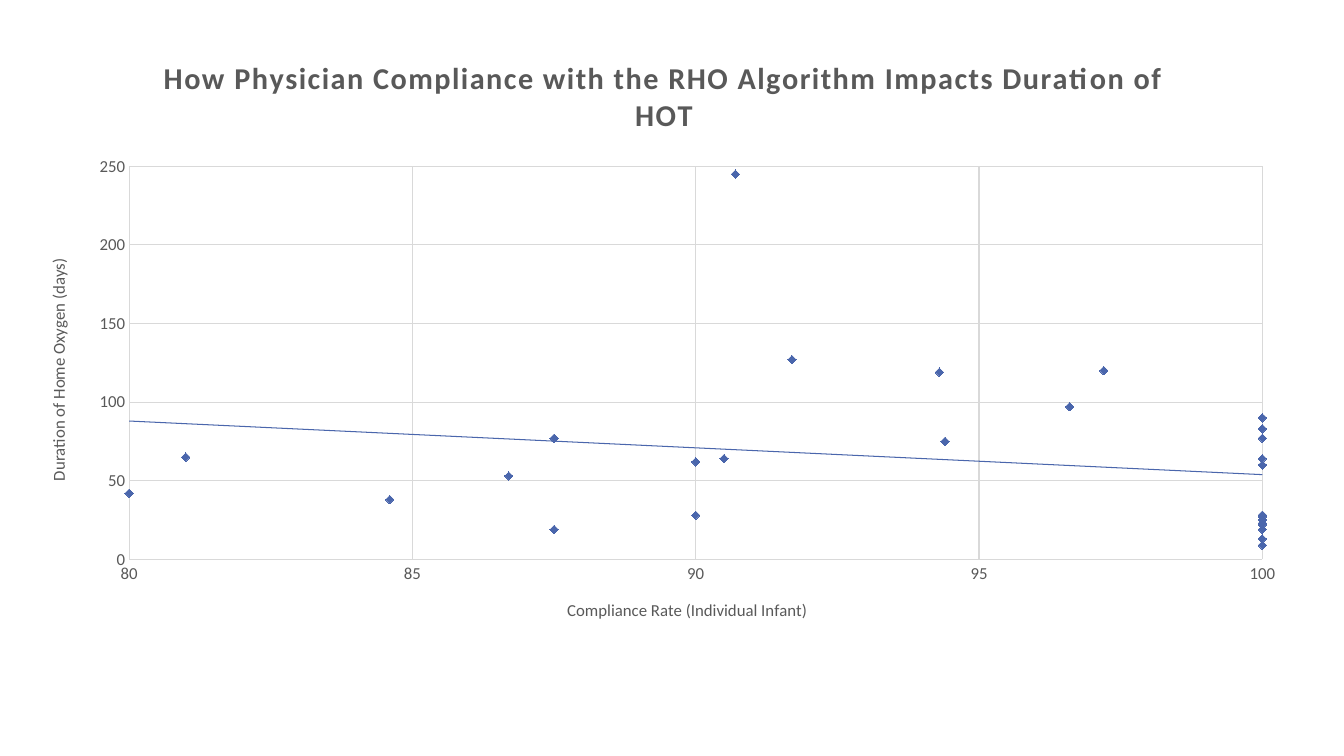
from lxml import etree
from pptx import Presentation
from pptx.chart.data import XyChartData
from pptx.dml.color import RGBColor
from pptx.enum.chart import XL_CHART_TYPE as ChartType
from pptx.enum.chart import XL_MARKER_STYLE as MarkerStyle
from pptx.enum.chart import XL_TICK_MARK as TickMark
from pptx.oxml import parse_xml
from pptx.oxml.ns import nsdecls, qn
from pptx.util import Inches, Pt

COLORS = {"text": "595959", "grid": "D9D9D9", "series": "4A66AC"}
FONT = "Calibri"
POINTS = [
    (90, 62), (86.7, 53), (84.6, 38), (100, 27), (100, 90), (91.7, 127),
    (100, 28), (97.2, 120), (100, 25), (100, 83), (90.7, 245), (90, 28),
    (100, 60), (78, 79), (96.6, 97), (87.5, 19), (87.5, 77), (100, 22),
    (100, 77), (100, 28), (100, 23), (74, 119), (79, 112), (100, 64),
    (94.4, 75), (100, 13), (100, 9), (94.3, 119), (81, 65), (80, 42),
    (90.5, 64), (100, 19),
]
PLOT_LAYOUT = {"x": 0.08, "y": 0.22, "w": 0.89, "h": 0.65}


def color(name):
    """Return the named colour."""
    return RGBColor.from_string(COLORS[name])


def format_font(font, size, bold=False):
    """Apply the chart's typeface and text colour."""
    font.name = FONT
    font.size = Pt(size)
    font.bold = bold
    font.color.rgb = color("text")


def set_title(owner, text, size=12, bold=False, spacing=0):
    """Give a chart or an axis a formatted title."""
    frame = owner.chart_title.text_frame if hasattr(owner, "chart_title") else owner.axis_title.text_frame
    frame.text = text
    run = frame.paragraphs[0].runs[0]
    format_font(run.font, size, bold)
    if spacing:
        run.font._element.set("spc", str(spacing))


def format_line(line, name):
    """Draw a thin line in the named colour."""
    line.color.rgb = color(name)
    line.width = Pt(0.75)


def format_axis(axis, title, minimum, maximum, step):
    """Set an axis's scale, gridlines, labels and title."""
    axis.minimum_scale, axis.maximum_scale, axis.major_unit = minimum, maximum, step
    axis.major_tick_mark = axis.minor_tick_mark = TickMark.NONE
    axis.has_major_gridlines = True
    format_line(axis.major_gridlines.format.line, "grid")
    format_line(axis.format.line, "grid")
    format_font(axis.tick_labels.font, 12)
    axis.tick_labels.number_format = "General"
    axis.tick_labels.number_format_is_linked = False
    set_title(axis, title)


def format_series(series):
    """Show the points as diamonds without a joining line."""
    series.smooth = False
    series.format.line.fill.background()
    marker = series.marker
    marker.style, marker.size = MarkerStyle.DIAMOND, 6
    marker.format.fill.solid()
    marker.format.fill.fore_color.rgb = color("series")
    format_line(marker.format.line, "series")


def add_trendline(series):
    """Add a linear trend line to a series."""
    trendline = parse_xml(
        f'<c:trendline {nsdecls("c", "a")}><c:spPr><a:ln w="{Pt(0.75)}"><a:solidFill>'
        f'<a:srgbClr val="{COLORS["series"]}"/></a:solidFill></a:ln></c:spPr>'
        '<c:trendlineType val="linear"/><c:dispRSqr val="0"/><c:dispEq val="0"/></c:trendline>'
    )
    series._element.find(qn("c:xVal")).addprevious(trendline)


def place_plot(chart):
    """Fix the inner plot area within the chart."""
    plot_area = chart._chartSpace.find(f'.//{qn("c:plotArea")}')
    for layout in plot_area.findall(qn("c:layout")):
        plot_area.remove(layout)
    layout = etree.Element(qn("c:layout"))
    manual = etree.SubElement(layout, qn("c:manualLayout"))
    settings = {"layoutTarget": "inner", "xMode": "edge", "yMode": "edge", **PLOT_LAYOUT}
    for tag, value in settings.items():
        etree.SubElement(manual, qn(f"c:{tag}")).set("val", str(value))
    plot_area.insert(0, layout)


def add_scatter(slide):
    """Add the compliance scatter chart."""
    data = XyChartData()
    points = data.add_series("Series 1")
    for rate, days in POINTS:
        points.add_data_point(rate, days)
    chart = slide.shapes.add_chart(
        ChartType.XY_SCATTER, Inches(0.27), Inches(0.33), Inches(12.63), Inches(6), data
    ).chart
    chart.has_legend = False
    format_font(chart.font, 10)
    set_title(chart, "How Physician Compliance with the RHO Algorithm Impacts Duration of HOT",
              size=21.6, bold=True, spacing=100)
    chart.chart_title.include_in_layout = False
    format_axis(chart.category_axis, "Compliance Rate (Individual Infant)", 80, 100, 5)
    format_axis(chart.value_axis, "Duration of Home Oxygen (days)", 0, 250, 50)
    plot = chart.plots[0]
    plot.vary_by_categories = False
    format_series(plot.series[0])
    add_trendline(plot.series[0])
    place_plot(chart)


def main():
    """Build and save the slide."""
    presentation = Presentation()
    presentation.slide_width, presentation.slide_height = Inches(13.33), Inches(7.5)
    slide = presentation.slides.add_slide(presentation.slide_layouts[6])
    add_scatter(slide)
    presentation.save("out.pptx")


if __name__ == "__main__":
    main()
